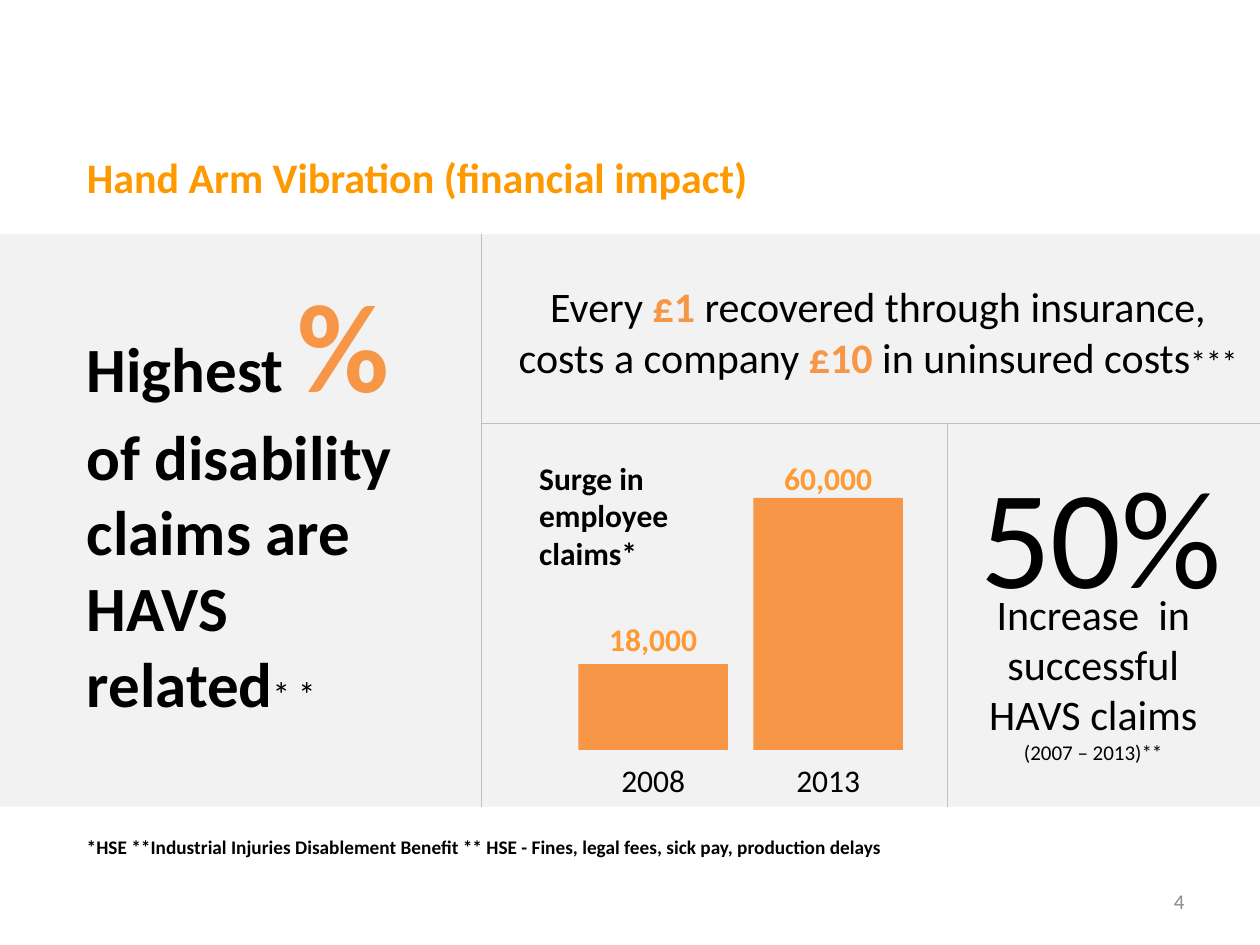
from pptx import Presentation
from pptx.dml.color import RGBColor
from pptx.enum.shapes import MSO_CONNECTOR, MSO_SHAPE
from pptx.enum.text import MSO_ANCHOR, PP_ALIGN
from pptx.oxml.ns import qn
from pptx.util import Pt

LEFT, CENTER, RIGHT = PP_ALIGN.LEFT, PP_ALIGN.CENTER, PP_ALIGN.RIGHT
TOP, MIDDLE = MSO_ANCHOR.TOP, MSO_ANCHOR.MIDDLE
RECTANGLE, STRAIGHT = MSO_SHAPE.RECTANGLE, MSO_CONNECTOR.STRAIGHT

FONT = "Calibri"
COLORS = {
    "title": "FF9900",
    "value": "FF9933",
    "accent": "F79646",
    "text": "000000",
    "band": "F2F2F2",
    "divider": "BFBFBF",
    "number": "8C8C8C",
}

# Content: runs are (text, format overrides); "\v" is a line break
TITLE = "Hand Arm Vibration (financial impact)"
ACCENT = {"color": "accent", "bold": True}
DISABILITY = [
    ("Highest ", {}),
    ("%", {"size": 72, "color": "accent"}),
    ("\vof disability claims are HAVS\vrelated", {}),
    ("* *", {"size": 20, "bold": False}),
]
COSTS = [
    ("Every ", {}),
    ("£1", ACCENT),
    (" recovered through insurance, costs a company ", {}),
    ("£10 ", ACCENT),
    ("in uninsured costs", {}),
    ("***", {"size": 18}),
]
INCREASE = [
    ("Increase  in successful HAVS claims\v", {}),
    ("(2007 – 2013)**", {"size": 12}),
]
SURGE = "Surge in\vemployee\vclaims*"
SOURCES = ("*HSE **Industrial Injuries Disablement Benefit ** HSE - "
           "Fines, legal fees, sick pay, production delays")
CLAIMS = [("2008", "18,000", 49), ("2013", "60,000", 144)]  # year, claims, bar height

# Layout, in points
SLIDE_WIDTH, SLIDE_HEIGHT = 720, 540
BAND_TOP, BAND_BOTTOM = 134, 461
MARGIN = 42.5
COLUMN_X, ROW_Y, CHART_RIGHT = 275, 242, 541.5
DIVIDERS = [
    (SLIDE_WIDTH, ROW_Y, COLUMN_X, ROW_Y),
    (COLUMN_X, BAND_TOP, COLUMN_X, BAND_BOTTOM),
    (CHART_RIGHT, ROW_Y, CHART_RIGHT, BAND_BOTTOM),
]
BAR_LEFT, BAR_WIDTH, BAR_STEP, BAR_BASE = 330.5, 85.5, 100, 428.5
LABEL_HEIGHT, YEAR_GAP, YEAR_OVERHANG = 29, 3, 8


def rgb(name):
    return RGBColor.from_string(COLORS[name])


def add_text(slide, content, left, top, width, height, shape=None, size=18,
             color="text", bold=False, align=LEFT, anchor=TOP):
    """Write a string or a list of runs in a text box or in the given shape."""
    box = [Pt(value) for value in (left, top, width, height)]
    if shape is None:
        shape = slide.shapes.add_textbox(*box)
    shape.left, shape.top, shape.width, shape.height = box
    frame = shape.text_frame
    frame.word_wrap = True
    frame.vertical_anchor = anchor
    paragraph = frame.paragraphs[0]
    paragraph.alignment = align
    paragraph.space_before = Pt(0)
    runs = [(content, {})] if isinstance(content, str) else content
    for text, overrides in runs:
        style = {"size": size, "color": color, "bold": bold, **overrides}
        for index, line in enumerate(text.split("\v")):
            if index:
                paragraph.add_line_break()
            if line:
                run = paragraph.add_run()
                run.text = line
                run.font.name = FONT
                run.font.size = Pt(style["size"])
                run.font.bold = style["bold"]
                run.font.color.rgb = rgb(style["color"])


def add_rectangle(slide, left, top, width, height, color):
    shape = slide.shapes.add_shape(RECTANGLE, Pt(left), Pt(top), Pt(width), Pt(height))
    shape.shadow.inherit = False
    shape.fill.solid()
    shape.fill.fore_color.rgb = rgb(color)
    shape.line.fill.background()


def add_divider(slide, *ends):
    line = slide.shapes.add_connector(STRAIGHT, *[Pt(value) for value in ends])
    line.line.color.rgb = rgb("divider")
    line.line.width = Pt(0.75)
    properties = line._element.spPr
    properties.append(properties.makeelement(qn("a:effectLst"), {}))


def main():
    presentation = Presentation()
    presentation.slide_width, presentation.slide_height = Pt(SLIDE_WIDTH), Pt(SLIDE_HEIGHT)
    slide = presentation.slides.add_slide(presentation.slide_layouts[5])

    # Band, title and dividers
    add_rectangle(slide, 0, BAND_TOP, SLIDE_WIDTH, BAND_BOTTOM - BAND_TOP, "band")
    add_text(slide, TITLE, MARGIN, 83, 454, 45, shape=slide.shapes.title,
             size=24, color="title", bold=True)
    for ends in DIVIDERS:
        add_divider(slide, *ends)

    # Bars with claims above and years below
    for index, (year, claims, height) in enumerate(CLAIMS):
        left = BAR_LEFT + index * BAR_STEP
        top = BAR_BASE - height
        add_rectangle(slide, left, top, BAR_WIDTH, height, "accent")
        add_text(slide, claims, left, top - LABEL_HEIGHT + 3 * index, BAR_WIDTH,
                 LABEL_HEIGHT, color="value", bold=True, align=CENTER)
        add_text(slide, year, left - YEAR_OVERHANG, BAR_BASE + YEAR_GAP,
                 BAR_WIDTH + 2 * YEAR_OVERHANG, LABEL_HEIGHT, align=CENTER)
    add_text(slide, SURGE, 301, 258.5, 195, 73, bold=True)

    # Key messages
    add_text(slide, DISABILITY, MARGIN, 148.5, 244, 269, size=36, bold=True)
    add_text(slide, COSTS, 286.5, 157, 430.5, 100, size=24, align=CENTER)
    add_text(slide, "50%", 553, 253, 164, 104, size=80)
    add_text(slide, INCREASE, 549.5, 332.5, 150.5, 109, size=24, align=CENTER)

    # Sources and slide number
    add_text(slide, SOURCES, MARGIN, 474, 488, 21, size=11, bold=True)
    add_text(slide, "4", 516, 500.5, 168, 29, size=12, color="number",
             align=RIGHT, anchor=MIDDLE)

    presentation.save("out.pptx")


if __name__ == "__main__":
    main()
